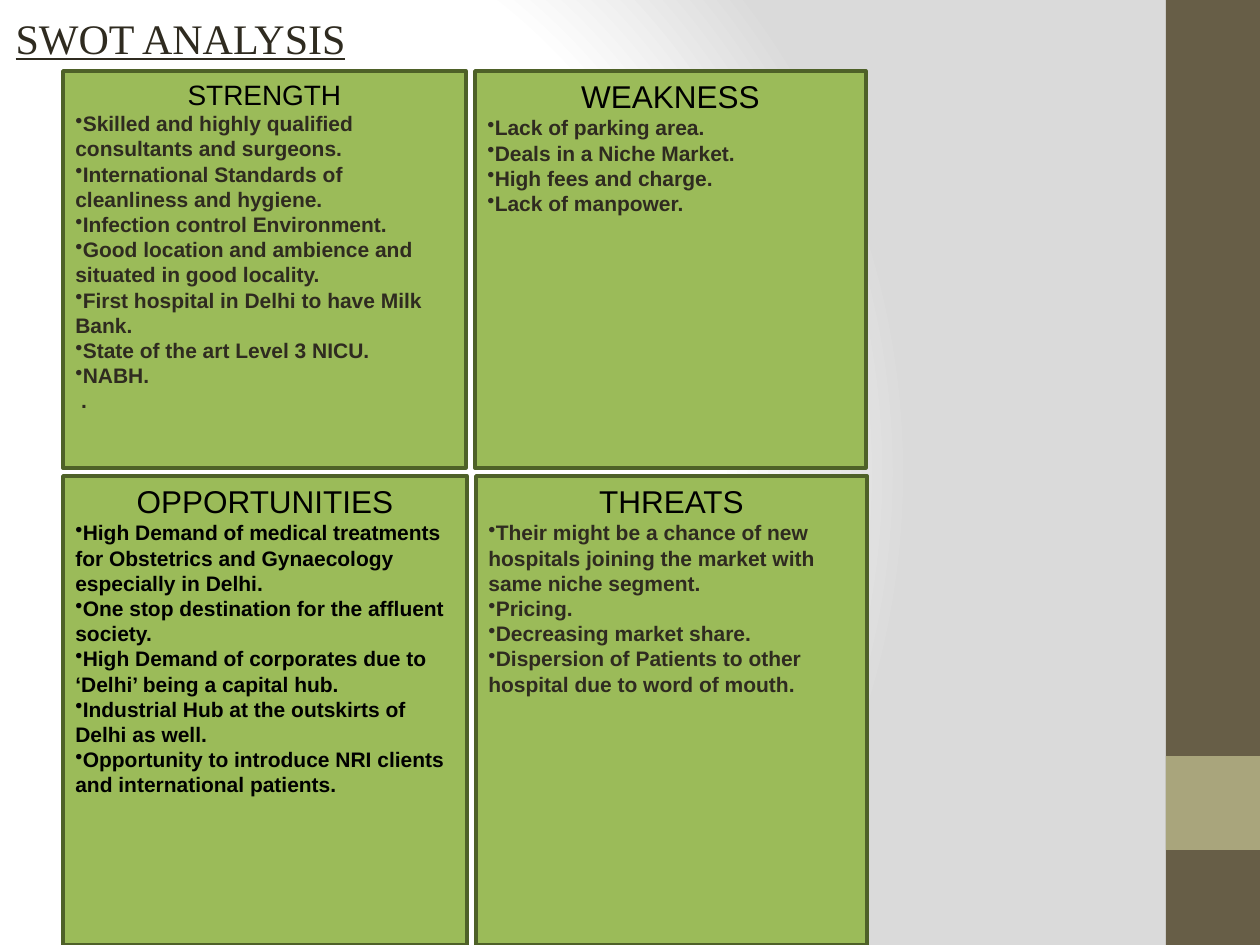
from dataclasses import dataclass

from lxml.etree import SubElement
from pptx import Presentation
from pptx.dml.color import RGBColor
from pptx.enum.shapes import MSO_SHAPE
from pptx.enum.text import MSO_ANCHOR, PP_ALIGN
from pptx.oxml import parse_xml
from pptx.oxml.ns import nsdecls, qn
from pptx.util import Emu, Pt

PX = 914400 / 126
COLORS = {
    "white": "FFFFFF",
    "gray": "DADADA",
    "brown": "675E47",
    "khaki": "A9A57C",
    "green": "9BBB59",
    "border": "4E6128",
    "ink": "2F2B20",
    "black": "000000",
}


@dataclass(frozen=True)
class Box:
    left: int
    top: int
    width: int
    height: int


@dataclass(frozen=True)
class Quadrant:
    box: Box
    heading: str
    items: tuple[str, ...]
    heading_size: int = 18
    item_color: str = "ink"
    closing: str = ""


SIDEBAR = (
    (Box(1166, 0, 94, 945), "brown"),
    (Box(1166, 756, 94, 94), "khaki"),
)

QUADRANTS = (
    Quadrant(
        Box(63, 71, 403, 397),
        "STRENGTH",
        (
            "Skilled and highly qualified consultants and surgeons.",
            "International Standards of cleanliness and hygiene.",
            "Infection control Environment.",
            "Good location and ambience and situated in good locality.",
            "First hospital in Delhi to have Milk Bank.",
            "State of the art Level 3 NICU.",
            "NABH.",
        ),
        heading_size=16,
        closing=" .",
    ),
    Quadrant(
        Box(475, 71, 391, 397),
        "WEAKNESS",
        (
            "Lack of parking area.",
            "Deals in a Niche Market.",
            "High fees and charge.",
            "Lack of manpower.",
        ),
    ),
    Quadrant(
        Box(63, 476, 404, 469),
        "OPPORTUNITIES",
        (
            "High Demand of medical treatments for Obstetrics and Gynaecology especially in Delhi.",
            "One stop destination for the affluent society.",
            "High Demand of corporates due to ‘Delhi’ being a capital hub.",
            "Industrial Hub at the outskirts of Delhi as well.",
            "Opportunity to introduce NRI clients and international patients.",
        ),
        item_color="black",
    ),
    Quadrant(
        Box(476, 476, 391, 469),
        "THREATS",
        (
            "Their might be a chance of new hospitals joining the market with same niche segment.",
            "Pricing.",
            "Decreasing market share.",
            "Dispersion of Patients to other hospital due to word of mouth.",
        ),
    ),
)


def px(value: int) -> Emu:
    return Emu(round(value * PX))


def rgb(name: str) -> RGBColor:
    return RGBColor.from_string(COLORS[name])


def place(sp, box: Box) -> None:
    sp.left, sp.top = px(box.left), px(box.top)
    sp.width, sp.height = px(box.width), px(box.height)


def style(p, size: int, color: str, font: str = "Arial", bold: bool = False) -> None:
    for r in p.runs:
        r.font.name = font
        r.font.size = Pt(size)
        r.font.bold = bold
        r.font.color.rgb = rgb(color)


def set_background(s) -> None:
    stops = "".join(
        f'<a:gs pos="{pos * 1000}"><a:srgbClr val="{COLORS[name]}"/></a:gs>'
        for pos, name in ((0, "white"), (75, "white"), (100, "gray"))
    )
    bg = parse_xml(
        f'<p:bg {nsdecls("p", "a")}><p:bgPr><a:gradFill rotWithShape="1">'
        f'<a:gsLst>{stops}</a:gsLst><a:path path="circle">'
        '<a:fillToRect l="20000" t="50000" r="100000" b="50000"/></a:path>'
        '</a:gradFill><a:effectLst/></p:bgPr></p:bg>'
    )
    s.element.cSld.insert(0, bg)


def add_rect(s, box: Box, fill: str):
    sp = s.shapes.add_shape(MSO_SHAPE.RECTANGLE, 0, 0, 0, 0)
    place(sp, box)
    sp.shadow.inherit = False
    sp.fill.solid()
    sp.fill.fore_color.rgb = rgb(fill)
    sp.line.fill.background()
    return sp


def add_title(s, text: str) -> None:
    sp = s.shapes.title
    place(sp, Box(3, 1, 753, 140))
    tf = sp.text_frame
    tf.text = text
    tf.vertical_anchor = MSO_ANCHOR.TOP
    tf.margin_top = px(11)
    p = tf.paragraphs[0]
    p.alignment = PP_ALIGN.LEFT
    style(p, 24, "ink", "Times New Roman")
    p.runs[0].font.underline = True


def add_item(tf, text: str, color: str, bullet: bool = True) -> None:
    p = tf.add_paragraph()
    p.text = text
    p.alignment = PP_ALIGN.LEFT
    style(p, 12, color, bold=True)
    if bullet:
        SubElement(p._p.get_or_add_pPr(), qn("a:buChar"), char="•")


def add_quadrant(s, quadrant: Quadrant) -> None:
    sp = add_rect(s, quadrant.box, "green")
    sp.line.color.rgb = rgb("border")
    sp.line.width = Pt(2)
    tf = sp.text_frame
    tf.word_wrap = True
    tf.vertical_anchor = MSO_ANCHOR.TOP
    tf.text = quadrant.heading
    p = tf.paragraphs[0]
    p.alignment = PP_ALIGN.CENTER
    style(p, quadrant.heading_size, "black")
    for item in quadrant.items:
        add_item(tf, item, quadrant.item_color)
    if quadrant.closing:
        add_item(tf, quadrant.closing, quadrant.item_color, bullet=False)


def main() -> None:
    prs = Presentation()
    prs.slide_width, prs.slide_height = px(1260), px(945)
    s = prs.slides.add_slide(prs.slide_layouts[5])
    set_background(s)
    for box, fill in SIDEBAR:
        add_rect(s, box, fill)
    for quadrant in QUADRANTS:
        add_quadrant(s, quadrant)
    add_title(s, "SWOT ANALYSIS")
    prs.save("out.pptx")


if __name__ == "__main__":
    main()
